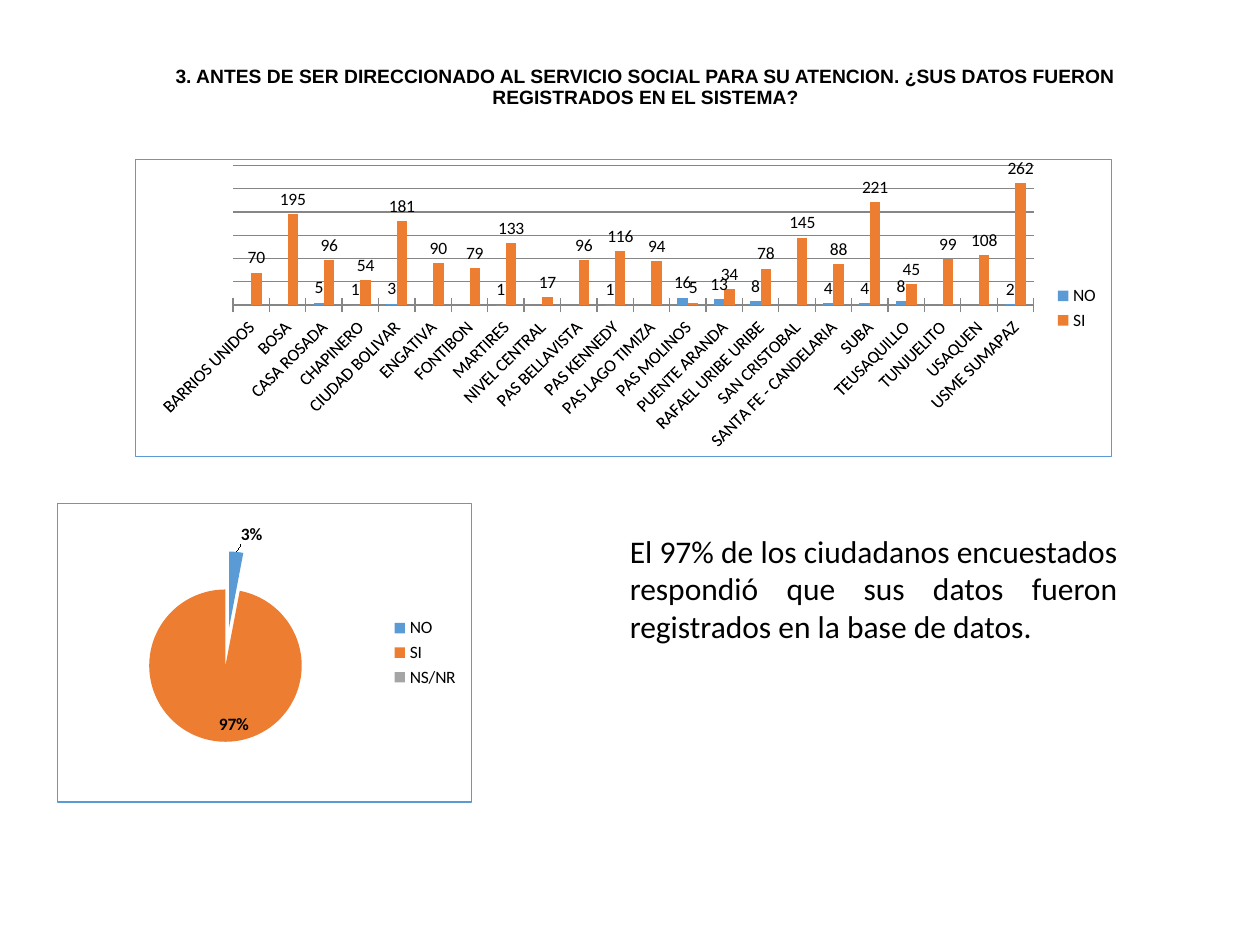
from lxml.etree import SubElement
from pptx import Presentation
from pptx.chart.data import CategoryChartData
from pptx.dml.color import RGBColor
from pptx.enum.chart import XL_CHART_TYPE as ChartType
from pptx.enum.chart import XL_LABEL_POSITION as LabelPos
from pptx.enum.chart import XL_LEGEND_POSITION as LegendPos
from pptx.enum.chart import XL_TICK_MARK as TickMark
from pptx.enum.text import MSO_ANCHOR as Anchor
from pptx.enum.text import PP_ALIGN as Align
from pptx.oxml import parse_xml
from pptx.oxml.ns import nsdecls, qn
from pptx.util import Pt

BLACK = RGBColor(0x00, 0x00, 0x00)
BLUE = RGBColor(0x5B, 0x9B, 0xD5)
ORANGE = RGBColor(0xED, 0x7D, 0x31)
GRAY = RGBColor(0xA5, 0xA5, 0xA5)
GRID = RGBColor(0x86, 0x86, 0x86)

TITLE = ("3. ANTES DE SER DIRECCIONADO AL SERVICIO SOCIAL PARA SU ATENCION. "
         "¿SUS DATOS FUERON REGISTRADOS EN EL SISTEMA?")
FINDING = ("El 97% de los ciudadanos encuestados respondió que sus datos "
           "fueron registrados en la base de datos.")
ANSWERS = [
    ("BARRIOS UNIDOS", None, 70), ("BOSA", None, 195),
    ("CASA ROSADA", 5, 96), ("CHAPINERO", 1, 54),
    ("CIUDAD BOLIVAR", 3, 181), ("ENGATIVA", None, 90),
    ("FONTIBON", None, 79), ("MARTIRES", 1, 133),
    ("NIVEL CENTRAL", None, 17), ("PAS BELLAVISTA", None, 96),
    ("PAS KENNEDY", 1, 116), ("PAS LAGO TIMIZA", None, 94),
    ("PAS MOLINOS", 16, 5), ("PUENTE ARANDA", 13, 34),
    ("RAFAEL URIBE URIBE", 8, 78), ("SAN CRISTOBAL", None, 145),
    ("SANTA FE - CANDELARIA", 4, 88), ("SUBA", 4, 221),
    ("TEUSAQUILLO", 8, 45), ("TUNJUELITO", None, 99),
    ("USAQUEN", None, 108), ("USME SUMAPAZ", 2, 262),
]
SHARES = [("NO", 3, BLUE), ("SI", 97, ORANGE), ("NS/NR", 0, GRAY)]


def add_text(slide, box, text, font_name, size, align, anchor, bold=False, spacing=1.0):
    """Place one wrapped paragraph in the box."""
    frame = slide.shapes.add_textbox(*map(Pt, box)).text_frame
    frame.word_wrap = True
    frame.vertical_anchor = anchor
    paragraph = frame.paragraphs[0]
    paragraph.alignment = align
    paragraph.line_spacing = spacing
    run = paragraph.add_run()
    run.text = text
    run.font.name = font_name
    run.font.size = Pt(size)
    run.font.bold = bold
    run.font.color.rgb = BLACK


def manual_layout(**settings):
    """Return a chart layout element with the given settings."""
    layout = parse_xml(f"<c:layout {nsdecls('c')}><c:manualLayout/></c:layout>")
    for tag, value in settings.items():
        SubElement(layout[0], qn(f"c:{tag}"), val=str(value))
    return layout


def add_framed_chart(slide, box, kind, data, plot_box):
    """Add a chart with a blue frame, a right legend and a fixed plot area."""
    chart = slide.shapes.add_chart(kind, *map(Pt, box), data).chart
    chart.has_title = False
    chart.font.name = "Calibri"
    chart.font.size = Pt(10)
    chart.font.color.rgb = BLACK
    chart.has_legend = True
    chart.legend.position = LegendPos.RIGHT
    chart.legend.include_in_layout = False
    chart_part = chart.element.find(qn("c:chart"))
    chart_part.addnext(parse_xml(
        f"<c:spPr {nsdecls('c', 'a')}><a:noFill/><a:ln w='{Pt(0.75)}'><a:solidFill>"
        f"<a:srgbClr val='{BLUE}'/></a:solidFill></a:ln></c:spPr>"))
    plot_area = chart_part.find(qn("c:plotArea"))
    for automatic in plot_area.findall(qn("c:layout")):
        plot_area.remove(automatic)
    plot_area.insert(0, manual_layout(
        layoutTarget="inner", xMode="edge", yMode="edge",
        **dict(zip("xywh", plot_box))))
    return chart


def add_localities(slide, box):
    """Draw the answers by locality as clustered columns."""
    localities, no_counts, yes_counts = zip(*ANSWERS)
    data = CategoryChartData()
    data.categories = localities
    data.add_series("NO", no_counts)
    data.add_series("SI", yes_counts)
    chart = add_framed_chart(slide, box, ChartType.COLUMN_CLUSTERED, data,
                             (0.1, 0.02, 0.82, 0.47))
    plot = chart.plots[0]
    plot.vary_by_categories = False
    plot.gap_width = 150
    plot.overlap = 0
    for series, color in zip(plot.series, (BLUE, ORANGE)):
        series.format.fill.solid()
        series.format.fill.fore_color.rgb = color
        series.data_labels.show_value = True
        series.data_labels.position = LabelPos.OUTSIDE_END
    counts = chart.value_axis
    counts.visible = False
    counts.minimum_scale, counts.maximum_scale, counts.major_unit = 0, 300, 50
    counts.has_major_gridlines = True
    names = chart.category_axis
    names.major_tick_mark = TickMark.CROSS
    names.tick_labels.font.size = Pt(10)
    names.tick_labels.font.color.rgb = BLACK
    names._element.find(qn("c:txPr")).find(qn("a:bodyPr")).set("rot", "-2700000")
    for line in (counts.major_gridlines.format.line, names.format.line):
        line.color.rgb = GRID
        line.width = Pt(0.75)


def place_share_label(point, dx, dy):
    """Show a bold percentage outside the slice, shifted by dx and dy."""
    label = point.data_label
    label.font.bold = True
    label.font.size = Pt(10)
    label.font.color.rgb = BLACK
    label.position = LabelPos.OUTSIDE_END
    element = point._element.find(qn("c:dLbls")).findall(qn("c:dLbl"))[-1]
    element.find(qn("c:showVal")).set("val", "0")
    element.find(qn("c:showPercent")).set("val", "1")
    element.find(qn("c:idx")).addnext(manual_layout(x=dx, y=dy))


def add_shares(slide, box):
    """Draw the share of each answer as an exploded pie."""
    answers, shares, colors = zip(*SHARES)
    data = CategoryChartData()
    data.categories = answers
    data.add_series("Series 1", shares)
    chart = add_framed_chart(slide, box, ChartType.PIE, data, (0.18, 0.1, 0.46, 0.76))
    plot = chart.plots[0]
    plot.vary_by_categories = True
    series = plot.series[0]
    for index, color in enumerate(colors):
        fill = series.points[index].format.fill
        fill.solid()
        fill.fore_color.rgb = color
    explosion = parse_xml(f"<c:explosion {nsdecls('c')} val='25'/>")
    series._element.find(qn("c:dPt")).addprevious(explosion)
    labels = series.data_labels
    labels.show_value = False
    labels.show_percentage = True
    labels.position = LabelPos.INSIDE_END
    labels.font.bold = True
    labels.font.size = Pt(10)
    labels.font.color.rgb = BLACK
    place_share_label(series.points[0], 0.01, 0)
    place_share_label(series.points[2], -0.03, -0.02)


def main():
    """Build the slide and save it."""
    deck = Presentation()
    deck.slide_width, deck.slide_height = Pt(720), Pt(540)
    slide = deck.slides.add_slide(deck.slide_layouts[6])
    add_text(slide, (67.7, 28.8, 602.6, 42.5), TITLE, "Arial", 11,
             Align.CENTER, Anchor.MIDDLE, bold=True, spacing=0.9)
    add_localities(slide, (77, 90.7, 558.7, 170.6))
    add_shares(slide, (32.4, 287.3, 237.6, 171.4))
    add_text(slide, (352.8, 300.2, 293, 94.3), FINDING, "Calibri", 18,
             Align.JUSTIFY, Anchor.TOP)
    deck.save("out.pptx")


if __name__ == "__main__":
    main()
